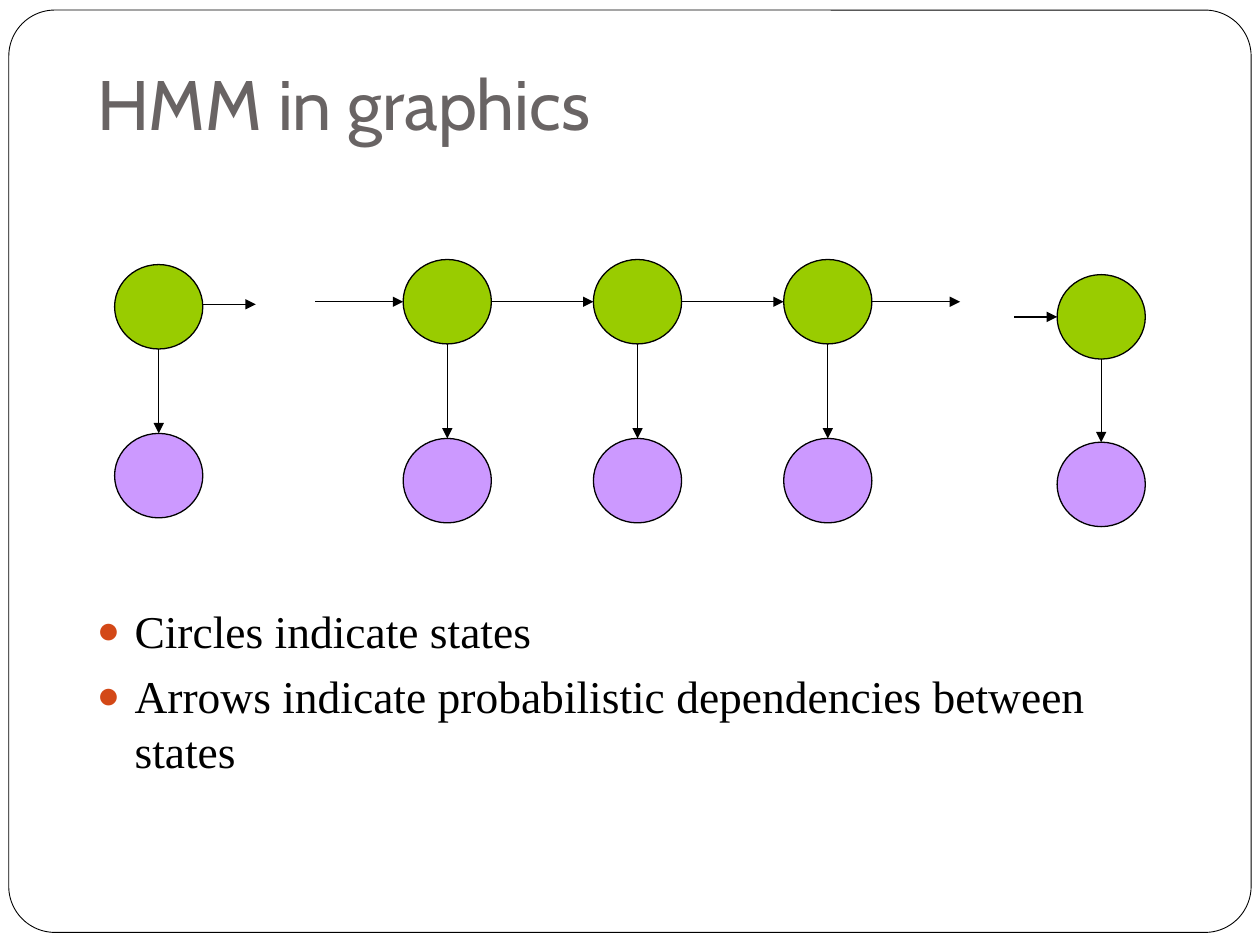
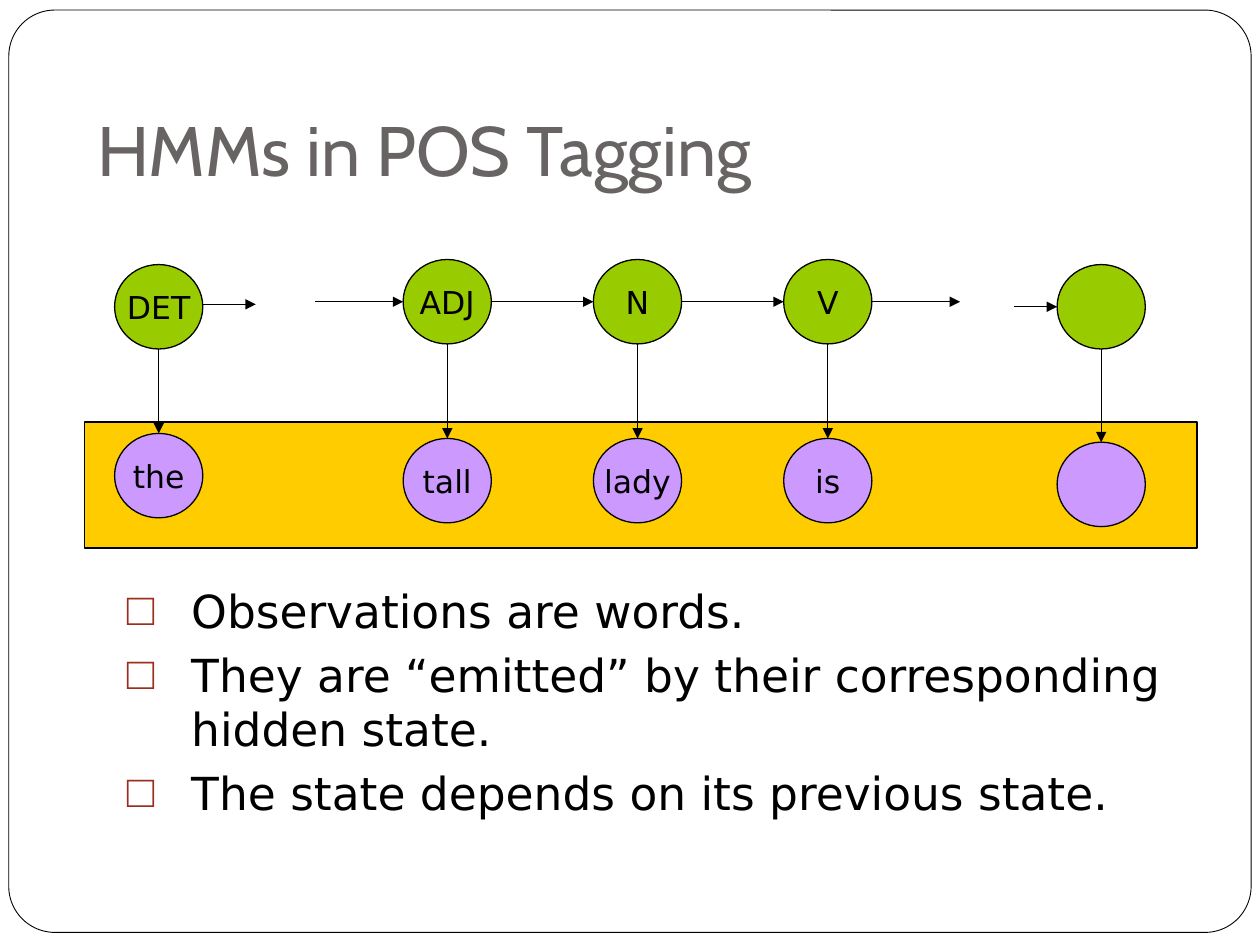
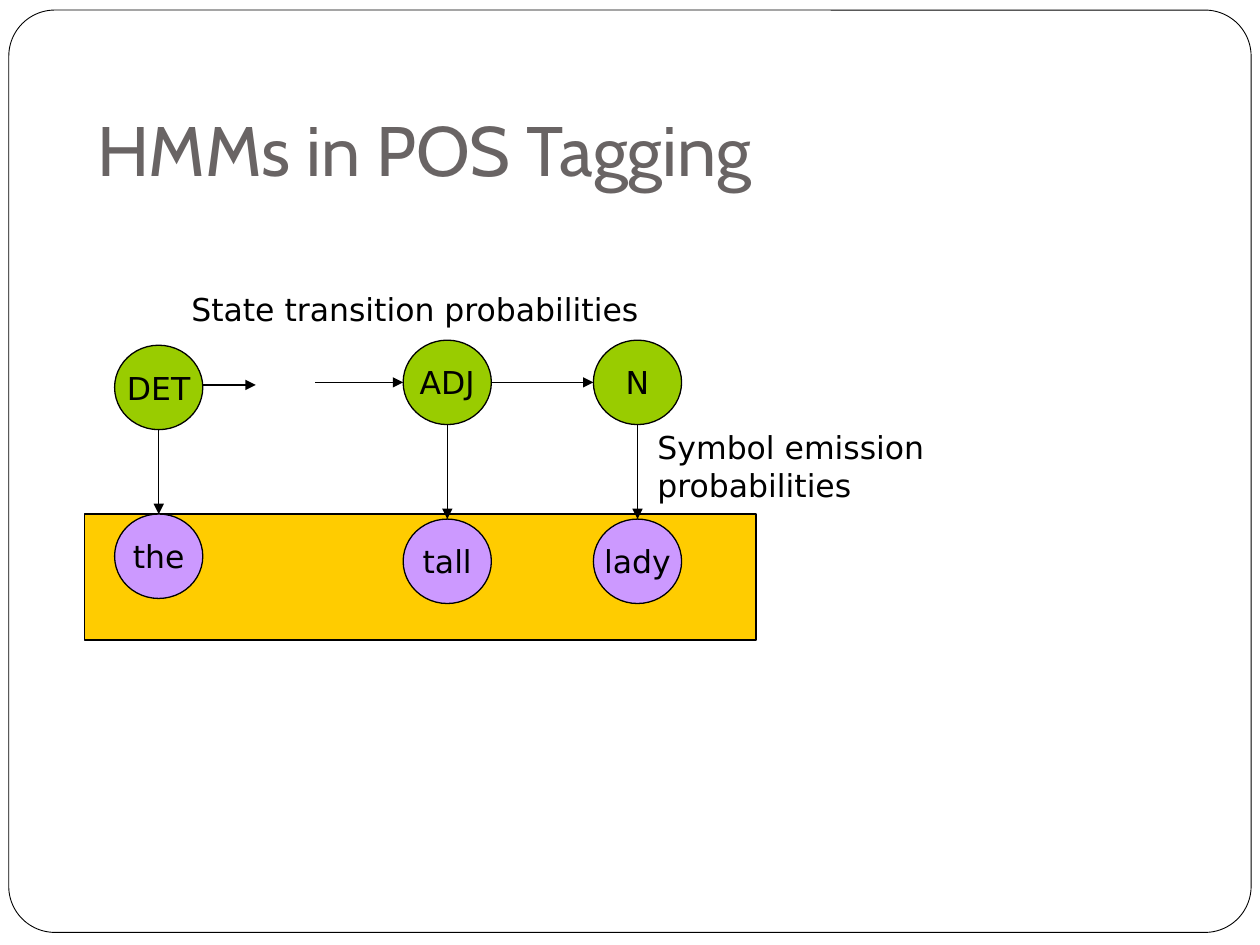
from dataclasses import dataclass, replace

from lxml import etree
from pptx import Presentation
from pptx.dml.color import RGBColor
from pptx.enum.shapes import MSO_CONNECTOR, MSO_SHAPE
from pptx.enum.text import MSO_ANCHOR, MSO_AUTO_SIZE, PP_ALIGN
from pptx.oxml.ns import qn
from pptx.util import Inches, Pt

OVAL, RECT, ROUNDED = MSO_SHAPE.OVAL, MSO_SHAPE.RECTANGLE, MSO_SHAPE.ROUNDED_RECTANGLE
STRAIGHT = MSO_CONNECTOR.STRAIGHT
MIDDLE, BOTTOM = MSO_ANCHOR.MIDDLE, MSO_ANCHOR.BOTTOM
CENTER, LEFT = PP_ALIGN.CENTER, PP_ALIGN.LEFT
NO_FIT, FIT_SHAPE = MSO_AUTO_SIZE.NONE, MSO_AUTO_SIZE.SHAPE_TO_FIT_TEXT

# Shared look
BLACK, WHITE, GREY = "000000", "FFFFFF", "696464"
GREEN, PURPLE, GOLD = "99CC00", "CC99FF", "FFCC00"
TITLE_FONT, SANS, SERIF = "Cabin", "DejaVu Sans", "Times New Roman"
TITLE_ONLY = 5
NODE_W, NODE_H = 0.7, 0.67


@dataclass(frozen=True)
class Node:
    """A hidden state above the word it emits, with its transition arrows."""
    left: float
    state_top: float
    word_top: float
    state: str = ""
    word: str = ""
    arrow_in: float = 0
    arrow_out: float = 0
    arrow_shift: float = 0


@dataclass(frozen=True)
class BulletStyle:
    char: str
    color: str
    font: str
    indent: float
    size_pct: int
    gap: float


DOTS = BulletStyle("●", "D34817", SERIF, 0.3, 85, 5.8)
SQUARES = BulletStyle("□", "9B2D1F", SANS, 0.51, 100, 5.2)

FIRST = Node(0.91, 2.1, 3.44, "DET", "the", arrow_out=0.42, arrow_shift=-0.02)
MIDDLES = [
    Node(3.2 + 1.51 * i, 2.06, 3.48, state, word, arrow_in=length)
    for i, (state, word, length) in enumerate(
        [("ADJ", "tall", 0.7), ("N", "lady", 0.81), ("V", "is", 0.81)])
]
MIDDLES[-1] = replace(MIDDLES[-1], arrow_out=0.7)
LAST = Node(8.39, 2.1, 3.51, arrow_in=0.34)
CHAIN = [FIRST, *MIDDLES, LAST]


def rgb(color: str) -> RGBColor:
    return RGBColor.from_string(color)


def inches(*values: float) -> list:
    return [Inches(v) for v in values]


def set_attrs(target, **values) -> None:
    for name, value in values.items():
        setattr(target, name, value)


def write(p, text: str, font: str, size: float, color: str = BLACK) -> None:
    r = p.add_run()
    r.text = text
    set_attrs(r.font, name=font, size=Pt(size))
    r.font.color.rgb = rgb(color)


def add_shape(slide, kind, box: tuple, fill: str, width: float = 0.75):
    sp = slide.shapes.add_shape(kind, *inches(*box))
    sp.shadow.inherit = False
    sp.fill.solid()
    sp.fill.fore_color.rgb = rgb(fill)
    sp.line.color.rgb = rgb(BLACK)
    sp.line.width = Pt(width)
    return sp


def add_arrow(slide, x1: float, y1: float, x2: float, y2: float) -> None:
    line = slide.shapes.add_connector(STRAIGHT, *inches(x1, y1, x2, y2))
    line.line.color.rgb = rgb(BLACK)
    line.line.width = Pt(0.75)
    etree.SubElement(line.line._get_or_add_ln(), qn("a:tailEnd"), type="triangle")
    etree.SubElement(line._element.spPr, qn("a:effectLst"))


def add_circle(slide, left: float, top: float, fill: str, text: str) -> None:
    sp = add_shape(slide, OVAL, (left, top, NODE_W, NODE_H), fill)
    if text:
        tf = sp.text_frame
        set_attrs(tf, word_wrap=False, vertical_anchor=MIDDLE)
        tf.paragraphs[0].alignment = CENTER
        write(tf.paragraphs[0], text, SANS, 18)


def add_nodes(slide, nodes: list[Node], drop: float = 0) -> None:
    for n in nodes:
        top, word_top = n.state_top + drop, n.word_top + drop
        add_circle(slide, n.left, top, GREEN, n.state)
        add_circle(slide, n.left, word_top, PURPLE, n.word)
        middle, right = n.left + NODE_W / 2, n.left + NODE_W
        add_arrow(slide, middle, top + NODE_H, middle, word_top)
        y = top + NODE_H / 2 + n.arrow_shift
        if n.arrow_in:
            add_arrow(slide, n.left - n.arrow_in, y, n.left, y)
        if n.arrow_out:
            add_arrow(slide, right, y, right + n.arrow_out, y)


def add_bullets(slide, box: tuple, lines: list[str], style: BulletStyle) -> None:
    tf = slide.shapes.add_textbox(*inches(*box)).text_frame
    tf.word_wrap = True
    for i, text in enumerate(lines):
        p = tf.add_paragraph() if i else tf.paragraphs[0]
        p.space_before = Pt(style.gap)
        pPr = p._p.get_or_add_pPr()
        pPr.set("marL", str(Inches(style.indent)))
        pPr.set("indent", str(-Inches(style.indent)))
        color = etree.SubElement(pPr, qn("a:buClr"))
        etree.SubElement(color, qn("a:srgbClr"), val=style.color)
        etree.SubElement(pPr, qn("a:buSzPct"), val=str(style.size_pct * 1000))
        etree.SubElement(pPr, qn("a:buFont"), typeface=SERIF)
        etree.SubElement(pPr, qn("a:buChar"), char=style.char)
        write(p, text, style.font, 26)


def add_label(slide, box: tuple, lines: list[str]) -> None:
    tf = slide.shapes.add_textbox(*inches(*box)).text_frame
    set_attrs(tf, word_wrap=False, auto_size=FIT_SHAPE)
    for i, text in enumerate(lines):
        write(tf.add_paragraph() if i else tf.paragraphs[0], text, SANS, 18)


def new_slide(prs, text: str, title_top: float):
    slide = prs.slides.add_slide(prs.slide_layouts[TITLE_ONLY])
    title = slide.shapes.title
    left, top, width, height = inches(0.67, title_top, 8.5, 1.25)
    set_attrs(title, left=left, top=top, width=width, height=height)
    tf = title.text_frame
    set_attrs(tf, word_wrap=True, auto_size=NO_FIT, vertical_anchor=BOTTOM,
              margin_bottom=Inches(0.1))
    tf.paragraphs[0].alignment = LEFT
    write(tf.paragraphs[0], text, TITLE_FONT, 40, GREY)
    # Rounded page frame behind the title
    frame = add_shape(slide, ROUNDED, (0.07, 0.08, 9.86, 7.32), WHITE, 0.5)
    frame.adjustments[0] = 0.05
    title._element.addprevious(frame._element)
    return slide


def graphics_slide(prs) -> None:
    slide = new_slide(prs, "HMM in graphics", 0)
    blank = [replace(n, state="", word="") for n in CHAIN]
    blank[-1] = replace(blank[-1], state_top=2.18)
    add_nodes(slide, blank)
    add_bullets(slide, (0.67, 4.74, 8.5, 1.65), [
        "Circles indicate states",
        "Arrows indicate probabilistic dependencies between states",
    ], DOTS)


def tagging_slide(prs) -> None:
    slide = new_slide(prs, "HMMs in POS Tagging", 0.36)
    add_shape(slide, RECT, (0.67, 3.35, 8.83, 1), GOLD)
    add_nodes(slide, CHAIN)
    add_bullets(slide, (0.91, 4.58, 8.5, 2.17), [
        "Observations are words.",
        "They are “emitted” by their corresponding hidden state.",
        "The state depends on its previous state.",
    ], SQUARES)


def probabilities_slide(prs) -> None:
    slide = new_slide(prs, "HMMs in POS Tagging", 0.36)
    add_shape(slide, RECT, (0.67, 4.08, 5.33, 1), GOLD)
    add_nodes(slide, CHAIN[:3], drop=0.64)
    add_label(slide, (1.42, 2.25, 3.8, 0.4), ["State transition probabilities"])
    add_label(slide, (5.12, 3.35, 2.44, 0.71), ["Symbol emission", "probabilities"])


def main() -> None:
    prs = Presentation()
    set_attrs(prs, slide_width=Inches(10), slide_height=Inches(7.5))
    graphics_slide(prs)
    tagging_slide(prs)
    probabilities_slide(prs)
    prs.save("out.pptx")


if __name__ == "__main__":
    main()
